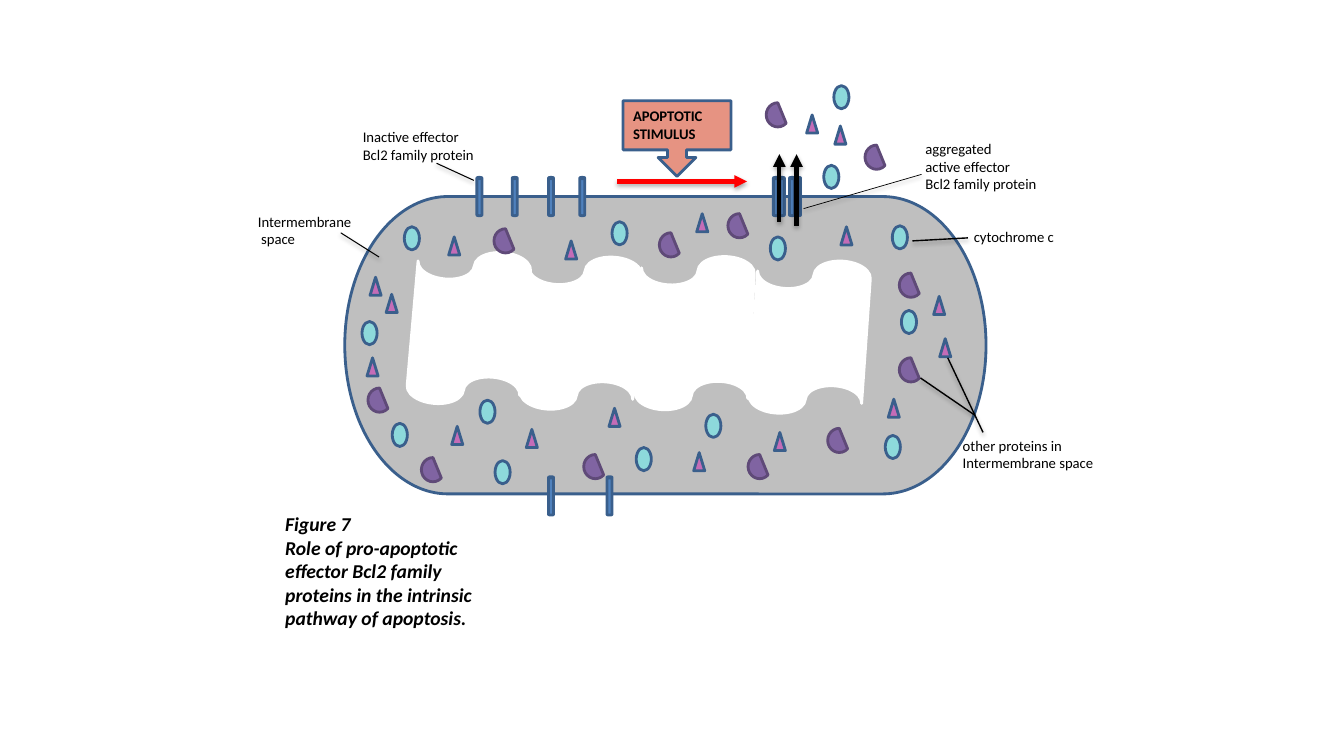
"""Build the slide on effector Bcl2 family proteins in the intrinsic pathway of apoptosis."""
import pptx
import pptx.dml.color
import pptx.enum.shapes
import pptx.enum.text
import pptx.oxml
import pptx.oxml.ns
import pptx.util

Inches = pptx.util.Inches
SHAPES = pptx.enum.shapes.MSO_SHAPE
OUTLINE = "3A5F8C"
SHADOW = (
    f'<a:effectLst {pptx.oxml.ns.nsdecls("a")}>'
    '<a:outerShdw blurRad="40000" dist="23000" dir="5400000" rotWithShape="0">'
    '<a:srgbClr val="000000"><a:alpha val="35000"/></a:srgbClr>'
    '</a:outerShdw></a:effectLst>'
)
ARROWHEAD = f'<a:tailEnd {pptx.oxml.ns.nsdecls("a")} type="triangle"/>'

presentation = pptx.Presentation()
presentation.slide_width = Inches(13.33)
presentation.slide_height = Inches(7.5)
slide = presentation.slides.add_slide(presentation.slide_layouts[6])


def color(value):
    return pptx.dml.color.RGBColor.from_string(value)


def draw_shape(kind, left, top, width, height, fill, line=OUTLINE, rotation=0):
    shape = slide.shapes.add_shape(kind, Inches(left), Inches(top), Inches(width), Inches(height))
    shape.shadow.inherit = False
    shape.rotation = rotation
    shape.fill.solid()
    shape.fill.fore_color.rgb = color(fill)
    shape.line.color.rgb = color(line)
    shape.line.width = pptx.util.Pt(2)


draw_shape(SHAPES.FLOWCHART_TERMINATOR, 3.42, 1.95, 6.36, 2.95, "BFBFBF")

matrix_folds = [(4.09, 2.48, 5), (5.2, 2.53, 184), (6.33, 2.53, 183), (7.47, 2.57, 4)]
for left, top, rotation in matrix_folds:
    draw_shape(SHAPES.FLOWCHART_PUNCHED_TAPE, left, top, 1.12, 1.55, "FFFFFF", "FFFFFF", rotation)

effector_rows = {
    4.73: [6.02, 5.44],
    1.76: [5.75, 5.44, 5.08, 4.73, 7.89, 7.83, 7.73, 7.67],
}
for top, lefts in effector_rows.items():
    for left in lefts:
        draw_shape(SHAPES.CAN, left, top, 0.05, 0.38, "4F81BD")

triangle_proteins = [
    (3.67, 2.75), (3.83, 2.92), (3.64, 3.55), (4.48, 4.23), (6.04, 4.05), (6.88, 4.49),
    (7.68, 4.29), (5.22, 4.26), (8.34, 2.25), (5.61, 2.39), (4.45, 2.35), (6.91, 2.12),
    (8.81, 3.96), (9.32, 3.36), (9.26, 2.94), (8, 1.14), (8.28, 1.25),
]
cytochromes = [
    (7.64, 2.35), (6.07, 2.2), (4.01, 2.25), (3.59, 3.19), (3.89, 4.2), (4.76, 3.97),
    (4.91, 4.57), (6.31, 4.44), (7, 4.11), (8.78, 4.32), (8.94, 3.08), (8.85, 2.24),
    (8.27, 0.85), (8.17, 1.64),
]
chord_proteins = [
    (7.42, 4.51), (7.22, 2.12), (6.54, 2.31), (4.9, 2.27), (3.65, 3.85), (4.18, 4.54),
    (5.79, 4.51), (8.21, 4.25), (8.92, 3.55), (8.92, 2.71), (8.58, 1.44), (7.6, 1.02),
]
protein_groups = [
    (SHAPES.ISOSCELES_TRIANGLE, triangle_proteins, 0.11, 0.18, "C46CB7", OUTLINE),
    (SHAPES.FLOWCHART_CONNECTOR, cytochromes, 0.15, 0.23, "8DD9DB", OUTLINE),
    (SHAPES.CHORD, chord_proteins, 0.23, 0.24, "8064A2", "5F4A78"),
]
for kind, places, width, height, fill, line in protein_groups:
    for left, top in places:
        draw_shape(kind, left, top, width, height, fill, line)

draw_shape(SHAPES.DOWN_ARROW_CALLOUT, 6.18, 1, 1.07, 0.75, "E69382")

connectors = [
    (6.12, 1.8, 7.41, 1.8, "FF0000", 3, True),
    (7.97, 2.07, 9.14, 1.73, "000000", 0.5, False),
    (9.05, 2.39, 9.6, 2.36, "000000", 1, False),
    (3.38, 2.31, 3.76, 2.55, "000000", 0.75, False),
    (4.7, 1.79, 4.33, 1.62, "000000", 0.75, False),
    (9.13, 3.75, 9.67, 4.12, "000000", 1, False),
    (9.4, 3.55, 9.75, 4.29, "000000", 1, False),
    (7.9, 2.24, 7.9, 1.53, "000000", 3, True),
    (7.73, 2.2, 7.73, 1.53, "000000", 3, True),
]
for start_x, start_y, end_x, end_y, line, width, has_arrow in connectors:
    connector = slide.shapes.add_connector(
        pptx.enum.shapes.MSO_CONNECTOR.STRAIGHT,
        Inches(start_x), Inches(start_y), Inches(end_x), Inches(end_y),
    )
    connector.line.color.rgb = color(line)
    connector.line.width = pptx.util.Pt(width)
    if has_arrow:
        connector.line._get_or_add_ln().append(pptx.oxml.parse_xml(ARROWHEAD))
    connector._element.spPr.append(pptx.oxml.parse_xml(SHADOW))

label = {"name": "Calibri", "size": pptx.util.Pt(10.5)}
stimulus = {**label, "bold": True}
caption = {**stimulus, "size": pptx.util.Pt(14), "italic": True}
texts = [
    (6.18, 1.01, 1.08, 0.45, stimulus, ["APOPTOTIC", "STIMULUS"]),
    (3.5, 1.22, 2.49, 0.45, label, ["Inactive effector", "Bcl2 family protein"]),
    (9.08, 1.34, 1.41, 0.63, label, ["aggregated", "active effector", "Bcl2 family protein"]),
    (9.56, 2.21, 1.24, 0.28, label, ["cytochrome c"]),
    (9.45, 4.28, 1.59, 0.45, label, ["other proteins in", "Intermembrane space"]),
    (2.46, 2.06, 1.36, 0.45, label, ["Intermembrane", " space"]),
    (2.73, 5.03, 2.39, 1.28, caption, [
        "Figure 7",
        "Role of pro-apoptotic",
        "effector Bcl2 family proteins in the intrinsic",
        "pathway of apoptosis.",
    ]),
]
for left, top, width, height, font_format, lines in texts:
    text_box = slide.shapes.add_textbox(Inches(left), Inches(top), Inches(width), Inches(height))
    text_frame = text_box.text_frame
    text_frame.word_wrap = True
    text_frame.auto_size = pptx.enum.text.MSO_AUTO_SIZE.SHAPE_TO_FIT_TEXT
    text_frame.text = "\n".join(lines)
    for paragraph in text_frame.paragraphs:
        font = paragraph.runs[0].font
        font.color.rgb = color("000000")
        for attribute, value in font_format.items():
            setattr(font, attribute, value)

presentation.save("out.pptx")
